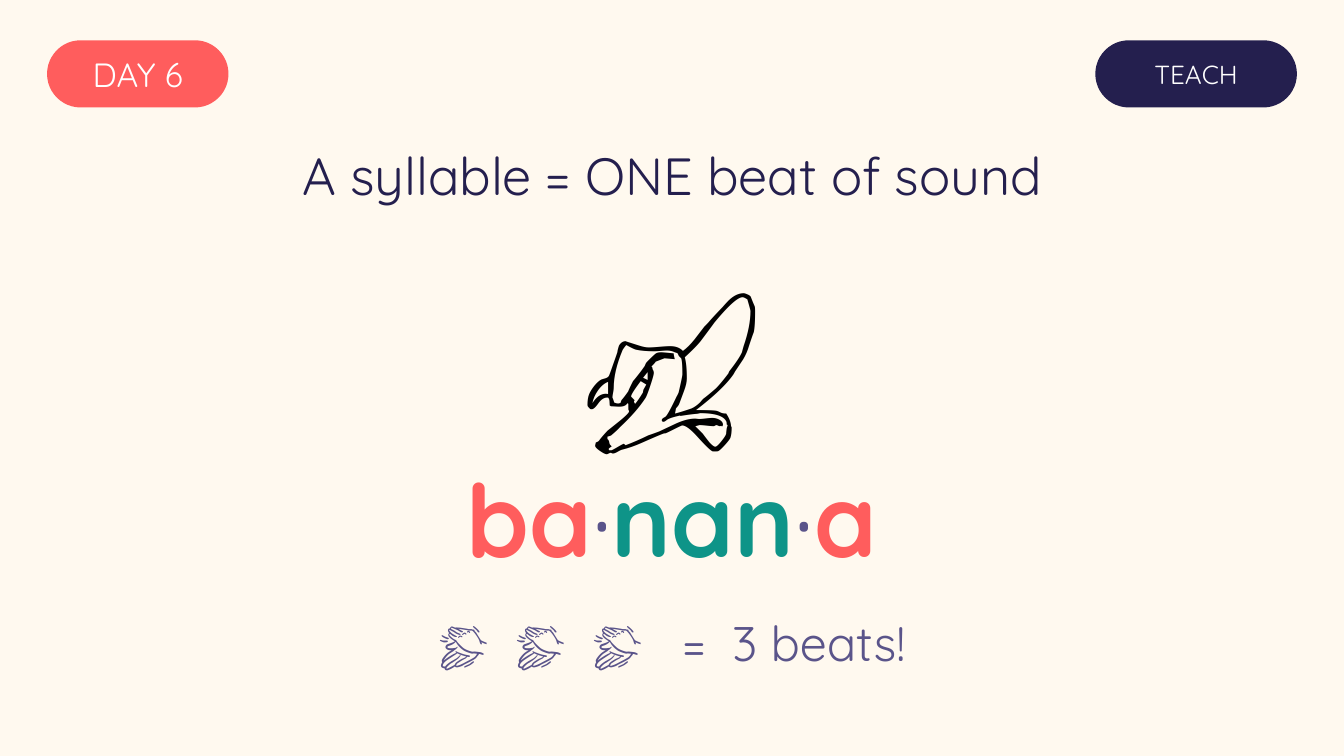
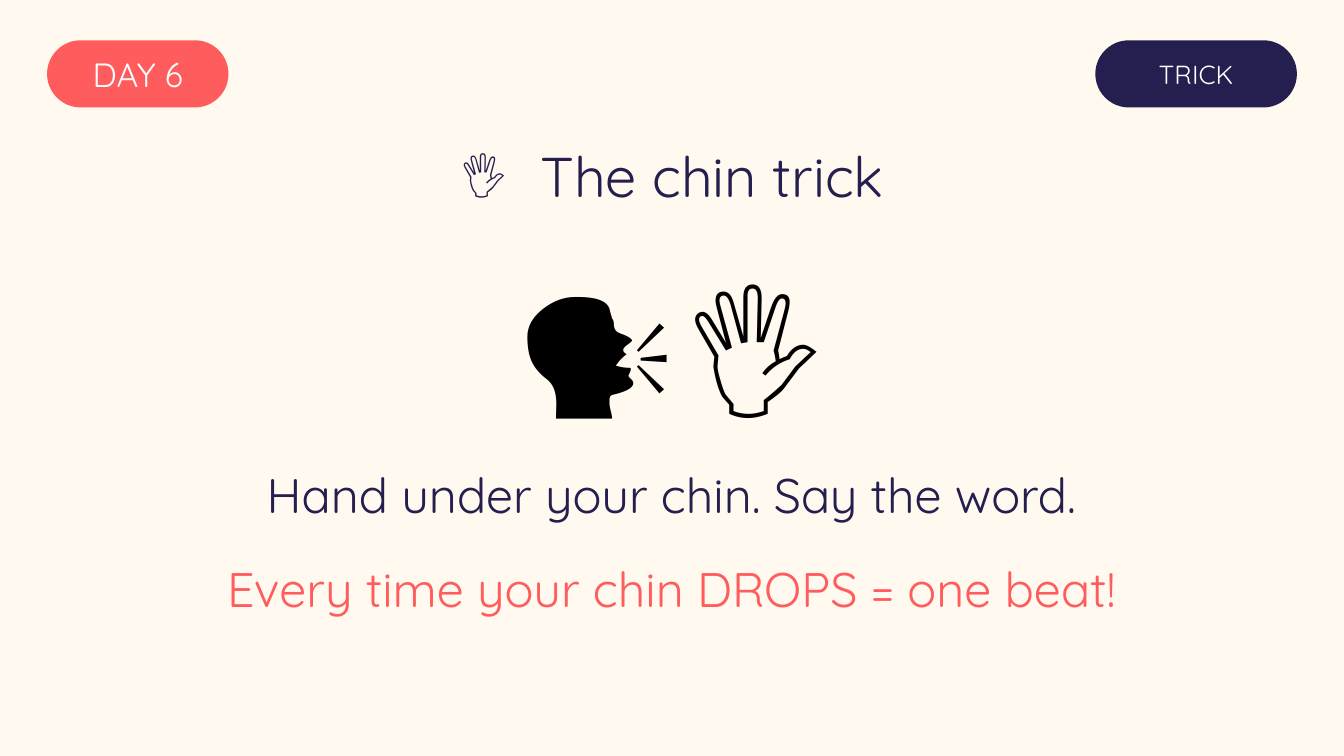
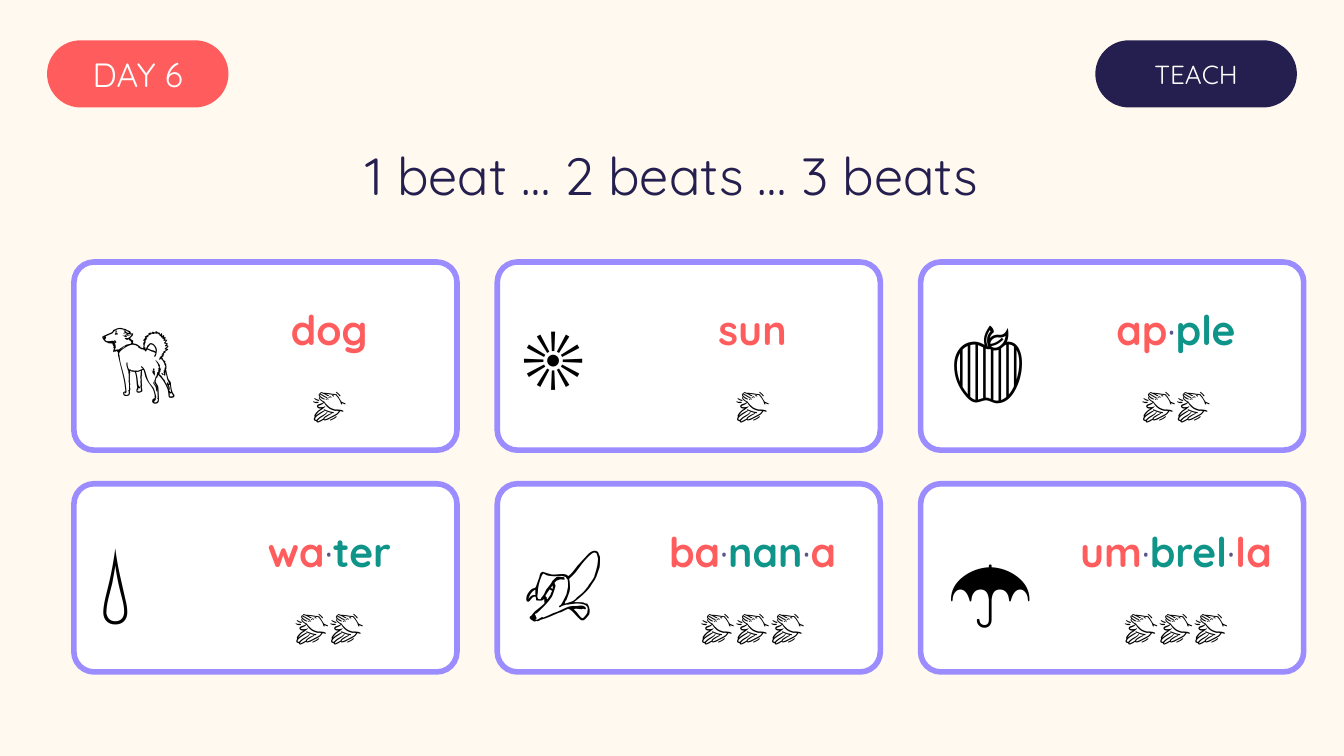
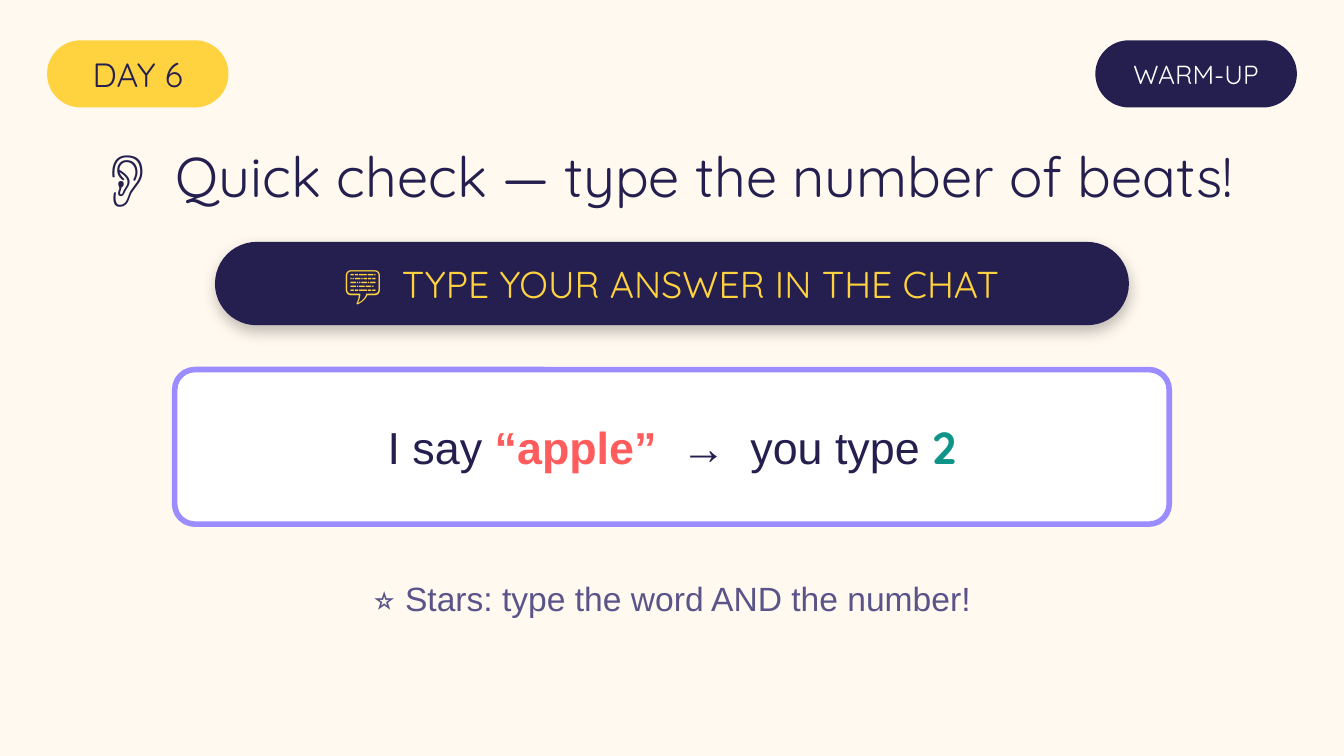
import dataclasses

import pptx
import pptx.dml.color
import pptx.enum.shapes
import pptx.enum.text
import pptx.oxml
import pptx.oxml.ns
import pptx.util

Inches = pptx.util.Inches
Pt = pptx.util.Pt
MIDDLE = pptx.enum.text.MSO_ANCHOR.MIDDLE
TOP = pptx.enum.text.MSO_ANCHOR.TOP
CENTER = pptx.enum.text.PP_ALIGN.CENTER
LEFT = pptx.enum.text.PP_ALIGN.LEFT

CREAM, WHITE, BLACK = "FFF9EF", "FFFFFF", "000000"
NAVY, CORAL, TEAL = "241F4E", "FF5D5D", "0E9488"
YELLOW, PURPLE, LILAC = "FFD23F", "5A548A", "9B8CFF"
ROUND_FONT, EMOJI_FONT, PLAIN_FONT = "Quicksand", "Calibri", "Arial"

SLIDE_WIDTH, SLIDE_HEIGHT = 10, 5.625
CORNER_RADIUS = 0.15
SPACE_WIDTH = 0.27  # of the text size


@dataclasses.dataclass
class Run:
    """A piece of a line; None means as in the rest of the line."""
    text: str
    color: str = None
    bold: bool = None
    font: str = None
    extra_spaces: int = 0


GAP = Run(" ", extra_spaces=1)
WIDE_GAP = Run(" ", extra_spaces=2)


def rgb(hex_color):
    return pptx.dml.color.RGBColor.from_string(hex_color)


def write(frame, content, size, color, font=ROUND_FONT, bold=False,
          align=CENTER, anchor=MIDDLE):
    """Fill a text frame with one line: a string or a list of Runs."""
    frame.word_wrap = True
    frame.vertical_anchor = anchor
    line = frame.paragraphs[0]
    line.alignment = align
    line.font.name = font
    line.font.size = Pt(size)
    line.font.bold = bold
    line.font.color.rgb = rgb(color)
    for part in [Run(content)] if isinstance(content, str) else content:
        run = line.add_run()
        run.text = part.text
        if part.color:
            run.font.color.rgb = rgb(part.color)
        if part.bold is not None:
            run.font.bold = part.bold
        if part.font:
            run.font.name = part.font
        if part.extra_spaces:
            spacing = round(part.extra_spaces * SPACE_WIDTH * size * 100)
            run.font._element.set("spc", str(spacing))


def add_text(slide, box, content, size, color, **style):
    frame = slide.shapes.add_textbox(*map(Inches, box)).text_frame
    write(frame, content, size, color, **style)


def add_rounded(slide, box, fill, radius, outline=None):
    shape = slide.shapes.add_shape(
        pptx.enum.shapes.MSO_SHAPE.ROUNDED_RECTANGLE, *map(Inches, box))
    shape.adjustments[0] = radius / min(box[2:])
    shape.shadow.inherit = False
    shape.fill.solid()
    shape.fill.fore_color.rgb = rgb(fill)
    if outline:
        shape.line.color.rgb = rgb(outline)
        shape.line.width = Pt(3)
    else:
        shape.line.fill.background()
    return shape


def add_pill(slide, box, label, size, fill, color):
    pill = add_rounded(slide, box, fill, min(box[2:]) / 2)
    frame = pill.text_frame
    frame.margin_left = frame.margin_right = 0
    frame.margin_top = frame.margin_bottom = 0
    write(frame, label, size, color)
    return pill


def add_card(slide, box):
    return add_rounded(slide, box, WHITE, CORNER_RADIUS, LILAC)


def add_soft_shadow(shape):
    effects = shape._element.spPr.find(pptx.oxml.ns.qn("a:effectLst"))
    effects.append(pptx.oxml.parse_xml(
        f'<a:outerShdw {pptx.oxml.ns.nsdecls("a")} blurRad="{Pt(8)}" '
        f'dist="{Pt(3)}" dir="5400000" algn="ctr" rotWithShape="0">'
        f'<a:srgbClr val="{BLACK}"><a:alpha val="25000"/></a:srgbClr>'
        '</a:outerShdw>'))


def full_width(top, height):
    return 0, top, SLIDE_WIDTH, height


def syllable_runs(word):
    """Colour the syllables of a dotted word in turn."""
    runs = []
    for index, syllable in enumerate(word.split("·")):
        if index:
            runs.append(Run("·", PURPLE, False))
        runs.append(Run(syllable, (CORAL, TEAL)[index % 2]))
    return runs


def start_slide(deck, stage, title, title_size, day_fill=CORAL, day_color=WHITE):
    """Add a slide with its background, both pills and the title."""
    slide = deck.slides.add_slide(deck.slide_layouts[6])
    slide.background.fill.solid()
    slide.background.fill.fore_color.rgb = rgb(CREAM)
    add_pill(slide, (0.35, 0.3, 1.35, 0.5), "DAY 6", 18, day_fill, day_color)
    add_pill(slide, (8.15, 0.3, 1.5, 0.5), stage, 14, NAVY, WHITE)
    add_text(slide, full_width(0.95, 0.7), title, title_size, NAVY)
    return slide


def syllable_slide(deck):
    slide = start_slide(deck, "TEACH", "A syllable = ONE beat of sound", 28)
    add_text(slide, full_width(1.75, 1.5), "🍌", 100, BLACK,
             font=EMOJI_FONT, anchor=TOP)
    add_text(slide, full_width(3.45, 0.8), syllable_runs("ba·nan·a"), 54,
             CORAL, bold=True)
    clap = Run("👏")
    add_text(slide, full_width(4.5, 0.55),
             [clap, GAP, clap, GAP, clap, WIDE_GAP, Run("="), GAP, Run("3 beats!")],
             26, PURPLE)


def chin_trick_slide(deck):
    slide = start_slide(deck, "TRICK", [Run("🖐️"), GAP, Run("The chin trick")], 30)
    add_text(slide, full_width(1.8, 1.4), "🗣️🖐️", 90, BLACK,
             font=EMOJI_FONT, anchor=TOP)
    add_text(slide, full_width(3.4, 0.55),
             "Hand under your chin. Say the word.", 26, NAVY)
    add_text(slide, full_width(4.1, 0.55),
             "Every time your chin DROPS = one beat!", 26, CORAL)


def add_word_card(slide, box, emoji, word):
    left, top = box[:2]
    add_card(slide, box)
    add_text(slide, (left + 0.1, top + 0.2, 0.9, 1), emoji, 44, BLACK,
             font=EMOJI_FONT, align=LEFT)
    add_text(slide, (left + 1, top + 0.15, 1.8, 0.7), syllable_runs(word), 22,
             CORAL, bold=True)
    add_text(slide, (left + 1, top + 0.8, 1.8, 0.5),
             "👏" * len(word.split("·")), 18, BLACK, font=EMOJI_FONT)


def beats_slide(deck):
    slide = start_slide(deck, "TEACH", "1 beat … 2 beats … 3 beats", 28)
    words = [("🐕", "dog"), ("☀️", "sun"), ("🍎", "ap·ple"),
             ("💧", "wa·ter"), ("🍌", "ba·nan·a"), ("☂️", "um·brel·la")]
    width, height = 2.85, 1.4
    column_step, row_step = width + 0.3, height + 0.25
    for index, (emoji, word) in enumerate(words):
        row, column = divmod(index, 3)
        box = (0.55 + column * column_step, 1.95 + row * row_step, width, height)
        add_word_card(slide, box, emoji, word)


def quick_check_slide(deck):
    title = [Run("👂"), GAP, Run("Quick check — type the number of beats!")]
    slide = start_slide(deck, "WARM-UP", title, 30, YELLOW, NAVY)
    chat_prompt = add_pill(
        slide, (1.6, 1.8, 6.8, 0.62),
        [Run("💬"), GAP, Run("TYPE YOUR ANSWER IN THE CHAT")], 20, NAVY, YELLOW)
    add_soft_shadow(chat_prompt)
    example = add_card(slide, (1.3, 2.75, 7.4, 1.15))
    write(example.text_frame,
          [Run("I say "), Run("“apple”", CORAL, True), GAP, Run("→"), GAP,
           Run("you type "), Run("2", TEAL, True, ROUND_FONT)],
          24, NAVY, font=PLAIN_FONT)
    add_text(slide, full_width(4.2, 0.5),
             "⭐ Stars: type the word AND the number!", 18, PURPLE, font=PLAIN_FONT)


def main():
    deck = pptx.Presentation()
    deck.slide_width = Inches(SLIDE_WIDTH)
    deck.slide_height = Inches(SLIDE_HEIGHT)
    syllable_slide(deck)
    chin_trick_slide(deck)
    beats_slide(deck)
    quick_check_slide(deck)
    deck.save("out.pptx")


if __name__ == "__main__":
    main()
